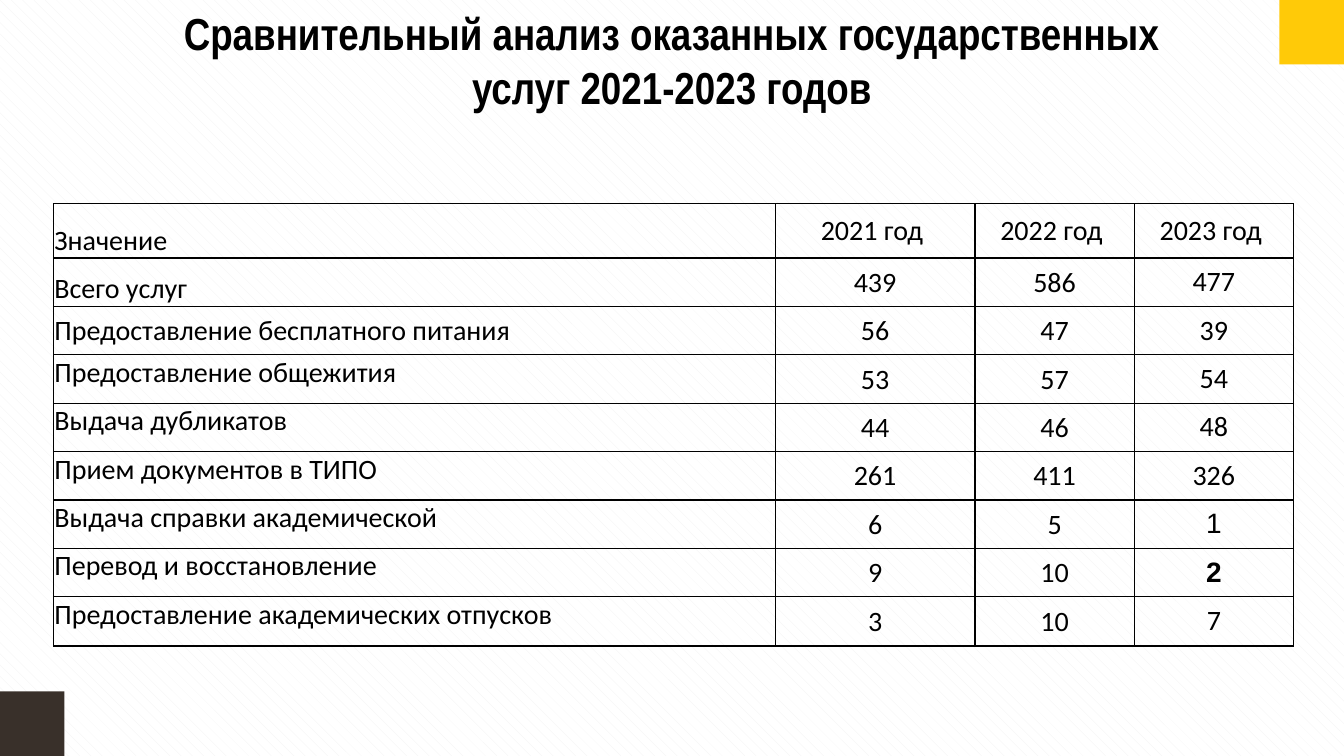
from lxml import etree
from pptx import Presentation
from pptx.dml.color import RGBColor
from pptx.enum.dml import MSO_PATTERN
from pptx.enum.shapes import MSO_SHAPE
from pptx.enum.text import MSO_ANCHOR, MSO_AUTO_SIZE, PP_ALIGN
from pptx.oxml.ns import qn
from pptx.util import Inches, Pt

TOP, MIDDLE, BOTTOM = MSO_ANCHOR.TOP, MSO_ANCHOR.MIDDLE, MSO_ANCHOR.BOTTOM
LEFT, CENTER = PP_ALIGN.LEFT, PP_ALIGN.CENTER
RECTANGLE = MSO_SHAPE.RECTANGLE
SHINGLE = MSO_PATTERN.SHINGLE
GROW = MSO_AUTO_SIZE.SHAPE_TO_FIT_TEXT

SLIDE_W, SLIDE_H, CORNER = 13.33, 7.5, 0.64
TITLE = "Сравнительный анализ оказанных государственных услуг 2021-2023 годов"
SERVICES = [
    ("Значение", "2021 год ", "2022 год ", "2023 год "),
    ("Всего услуг", "439", "586", "477"),
    ("Предоставление бесплатного питания", "56", "47", "39"),
    ("Предоставление общежития", "53", "57", "54"),
    ("Выдача дубликатов", "44", "46", "48"),
    ("Прием документов в ТИПО", "261", "411", "326"),
    ("Выдача справки академической", "6", "5", "1"),
    ("Перевод и восстановление", "9", "10", "2"),
    ("Предоставление академических отпусков", "3", "10", "7"),
]
COLUMN_WIDTHS = [7.16, 1.98, 1.58, 1.58]
ROW_HEIGHTS = [0.54] + [0.48] * 7 + [0.49]
LABEL_ANCHORS = [BOTTOM, BOTTOM, MIDDLE] + [TOP] * 6
# (row, column): (font, bold)
SPECIAL_FONTS = {(6, 3): ("Arial", False), (7, 3): ("Arial", True)}


def color(hex_code):
    return RGBColor.from_string(hex_code)


class ServicesSlide:
    """Holds the slide and its shared style."""

    ink = "000000"
    body_font = "Calibri"
    body_size = 20

    def __init__(self, prs):
        self.slide = prs.slides.add_slide(prs.slide_layouts[5])

    def background(self, fore, back):
        fill = self.slide.background.fill
        fill.patterned()
        fill.pattern = SHINGLE
        fill.fore_color.rgb = color(fore)
        fill.back_color.rgb = color(back)

    def corner(self, left, top, hex_code):
        square = self.slide.shapes.add_shape(
            RECTANGLE, Inches(left), Inches(top), Inches(CORNER), Inches(CORNER))
        square.shadow.inherit = False
        square.fill.solid()
        square.fill.fore_color.rgb = color(hex_code)
        square.line.fill.background()

    def add_text(self, frame, text, align, font, size, bold):
        paragraph = frame.paragraphs[0]
        paragraph.alignment = align
        run = paragraph.add_run()
        run.text = text
        run.font.name = font
        run.font.size = Pt(size)
        run.font.bold = bold
        run.font.color.rgb = color(self.ink)

    def title(self, text, left, top, width, height):
        heading = self.slide.shapes.title
        heading.left, heading.top = Inches(left), Inches(top)
        heading.width, heading.height = Inches(width), Inches(height)
        frame = heading.text_frame
        frame.word_wrap = True
        frame.auto_size = GROW
        frame.vertical_anchor = MIDDLE
        frame.margin_left = frame.margin_right = 0
        frame.margin_top = frame.margin_bottom = 0
        self.add_text(frame, text, CENTER, "Arial Narrow", 32, True)

    def borders(self, cell):
        """Outline a cell on all four sides; the lines must precede the fill."""
        properties = cell._tc.get_or_add_tcPr()
        for position, side in enumerate(("a:lnL", "a:lnR", "a:lnT", "a:lnB")):
            line = etree.Element(qn(side), w=str(Pt(1)))
            fill = etree.SubElement(line, qn("a:solidFill"))
            etree.SubElement(fill, qn("a:srgbClr"), val=self.ink)
            properties.insert(position, line)

    def cell(self, cell, row, column, text):
        is_label = column == 0
        inset = Inches(0 if column == 3 and row > 0 else 0.01)
        cell.margin_left = cell.margin_right = cell.margin_top = inset
        cell.margin_bottom = 0
        cell.vertical_anchor = LABEL_ANCHORS[row] if is_label else MIDDLE
        font, bold = SPECIAL_FONTS.get((row, column), (self.body_font, False))
        self.add_text(cell.text_frame, text, LEFT if is_label else CENTER,
                      font, self.body_size, bold)
        cell.fill.background()
        self.borders(cell)

    def table(self, rows, left, top):
        table = self.slide.shapes.add_table(
            len(rows), len(COLUMN_WIDTHS), Inches(left), Inches(top),
            Inches(sum(COLUMN_WIDTHS)), Inches(sum(ROW_HEIGHTS))).table
        table.first_row = table.horz_banding = False
        for column, width in zip(table.columns, COLUMN_WIDTHS):
            column.width = Inches(width)
        for row, height in zip(table.rows, ROW_HEIGHTS):
            row.height = Inches(height)
        for r, texts in enumerate(rows):
            for c, text in enumerate(texts):
                self.cell(table.cell(r, c), r, c, text)


def main():
    prs = Presentation()
    prs.slide_width, prs.slide_height = Inches(SLIDE_W), Inches(SLIDE_H)
    page = ServicesSlide(prs)
    page.background("F2F2F2", "FFFFFF")
    page.corner(SLIDE_W - CORNER, 0, "FFCA08")
    page.corner(0, SLIDE_H - CORNER, "39302A")
    page.title(TITLE, 1.6, 0.05, 10.13, 1.08)
    page.table(SERVICES, 0.53, 2.02)
    prs.save("out.pptx")


if __name__ == "__main__":
    main()
